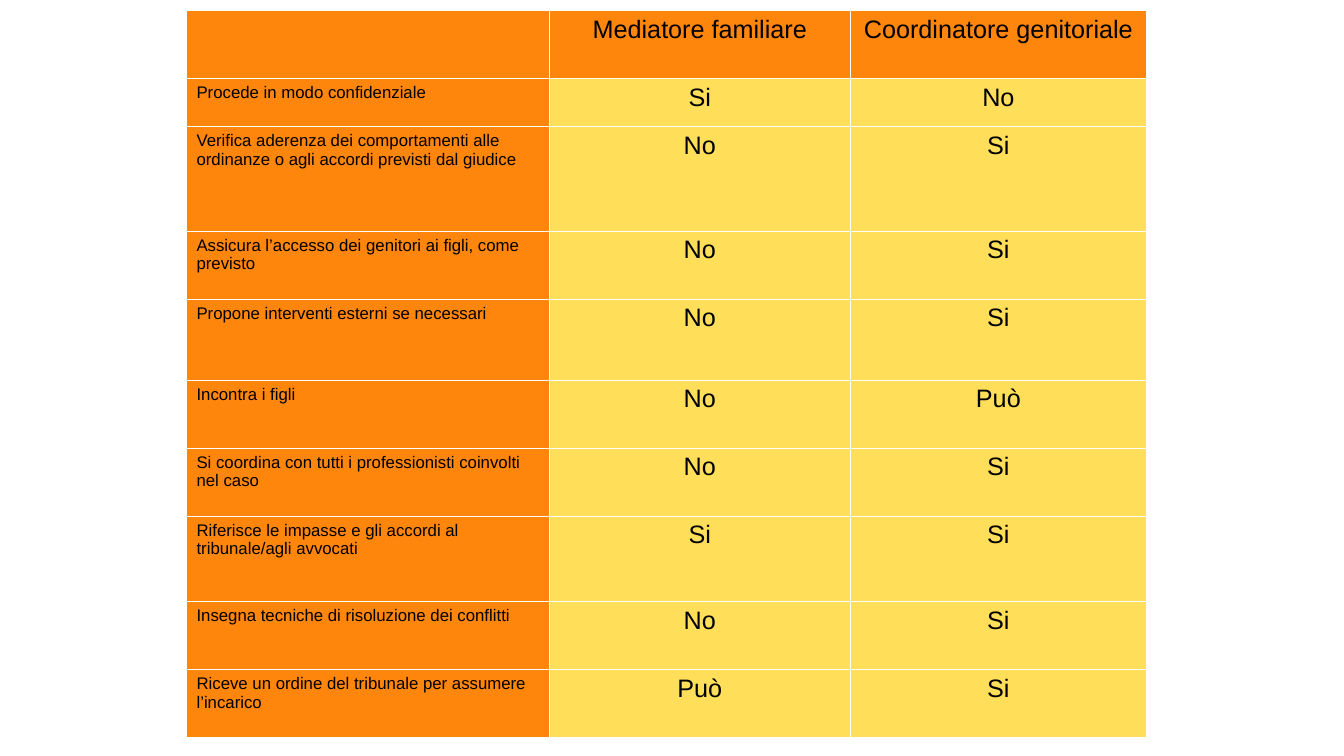
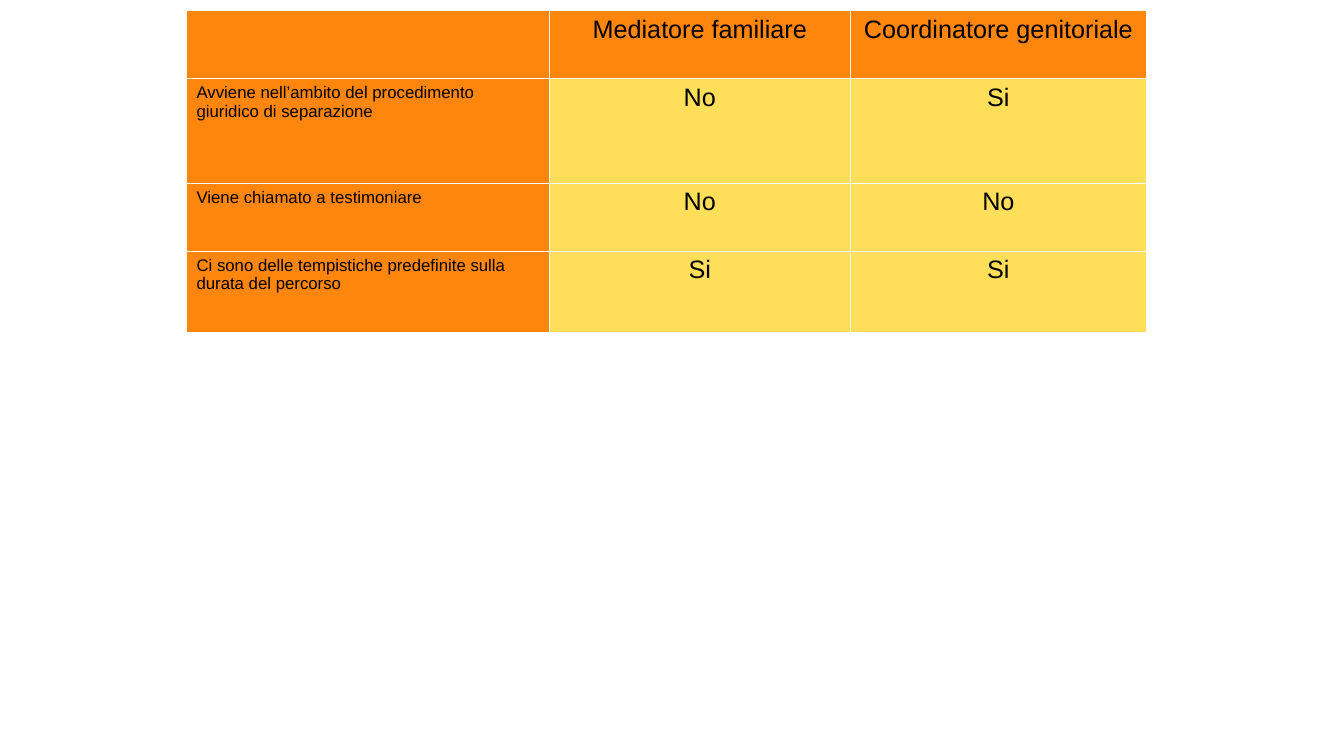
from lxml import etree
from pptx import Presentation
from pptx.dml.color import RGBColor
from pptx.enum.text import PP_ALIGN
from pptx.oxml.ns import qn
from pptx.util import Pt

LEFT = PP_ALIGN.LEFT
CENTER = PP_ALIGN.CENTER

ORANGE = RGBColor(0xFF, 0x86, 0x0D)
YELLOW = RGBColor(0xFF, 0xDE, 0x59)
BLACK = RGBColor(0x00, 0x00, 0x00)
WHITE = RGBColor(0xFF, 0xFF, 0xFF)

FONT = "Arial"
LABEL_SIZE = Pt(12)
ANSWER_SIZE = Pt(18)
BORDER_WIDTH = Pt(0.06)

TABLE_LEFT = Pt(133.2)
TABLE_TOP = Pt(7.5)
COLUMN_WIDTHS = [Pt(259.2), Pt(215), Pt(211.5)]

SHORT = Pt(34.3)
NORMAL = Pt(48.6)
MEDIUM = Pt(57.8)
LARGE = Pt(61)
TALL = Pt(74.5)

HEADER = (NORMAL, "", "Mediatore familiare", "Coordinatore genitoriale")

PRACTICE_ROWS = [
    (SHORT, "Procede in modo confidenziale", "Si", "No"),
    (TALL, "Verifica aderenza dei comportamenti alle ordinanze o agli accordi previsti dal giudice", "No", "Si"),
    (NORMAL, "Assicura l’accesso dei genitori ai figli, come previsto", "No", "Si"),
    (MEDIUM, "Propone interventi esterni se necessari", "No", "Si"),
    (NORMAL, "Incontra i figli", "No", "Può"),
    (NORMAL, "Si coordina con tutti i professionisti coinvolti nel caso", "No", "Si"),
    (LARGE, "Riferisce le impasse e gli accordi al tribunale/agli avvocati", "Si", "Si"),
    (NORMAL, "Insegna tecniche di risoluzione dei conflitti", "No", "Si"),
    (NORMAL, "Riceve un ordine del tribunale per assumere l’incarico", "Può", "Si"),
]

PROCEDURE_ROWS = [
    (TALL, "Avviene nell’ambito del procedimento giuridico di separazione", "No", "Si"),
    (NORMAL, "Viene chiamato a testimoniare", "No", "No"),
    (MEDIUM, "Ci sono delle tempistiche predefinite sulla durata del percorso", "Si", "Si"),
]


def set_borders(cell):
    properties = cell._tc.get_or_add_tcPr()
    for side in ("a:lnL", "a:lnR", "a:lnT", "a:lnB"):
        line = etree.SubElement(properties, qn(side), w=str(BORDER_WIDTH))
        fill = etree.SubElement(line, qn("a:solidFill"))
        etree.SubElement(fill, qn("a:srgbClr"), val=str(WHITE))


def fill_cell(cell, text, color, size, alignment):
    set_borders(cell)
    cell.fill.solid()
    cell.fill.fore_color.rgb = color
    cell.margin_left = cell.margin_right = Pt(7.2)
    cell.margin_top = cell.margin_bottom = Pt(3.6)
    cell.text = text
    paragraph = cell.text_frame.paragraphs[0]
    paragraph.alignment = alignment
    paragraph.font.name = FONT
    paragraph.font.size = size
    paragraph.font.color.rgb = BLACK


def add_comparison_slide(presentation, body_rows):
    slide = presentation.slides.add_slide(presentation.slide_layouts[6])
    rows = [HEADER] + body_rows
    table = slide.shapes.add_table(
        len(rows), len(COLUMN_WIDTHS), TABLE_LEFT, TABLE_TOP,
        sum(COLUMN_WIDTHS), sum(row[0] for row in rows),
    ).table
    table.horz_banding = False
    table.first_row = False
    for column, width in zip(table.columns, COLUMN_WIDTHS):
        column.width = width
    for row_index, (height, *texts) in enumerate(rows):
        table.rows[row_index].height = height
        for column_index, text in enumerate(texts):
            is_header = row_index == 0
            is_label = column_index == 0 and not is_header
            fill_cell(
                table.cell(row_index, column_index),
                text,
                ORANGE if is_header or is_label else YELLOW,
                LABEL_SIZE if is_label else ANSWER_SIZE,
                LEFT if is_label else CENTER,
            )


def main():
    presentation = Presentation()
    presentation.slide_width = Pt(960)
    presentation.slide_height = Pt(540)
    for body_rows in (PRACTICE_ROWS, PROCEDURE_ROWS):
        add_comparison_slide(presentation, body_rows)
    presentation.save("out.pptx")


if __name__ == "__main__":
    main()
